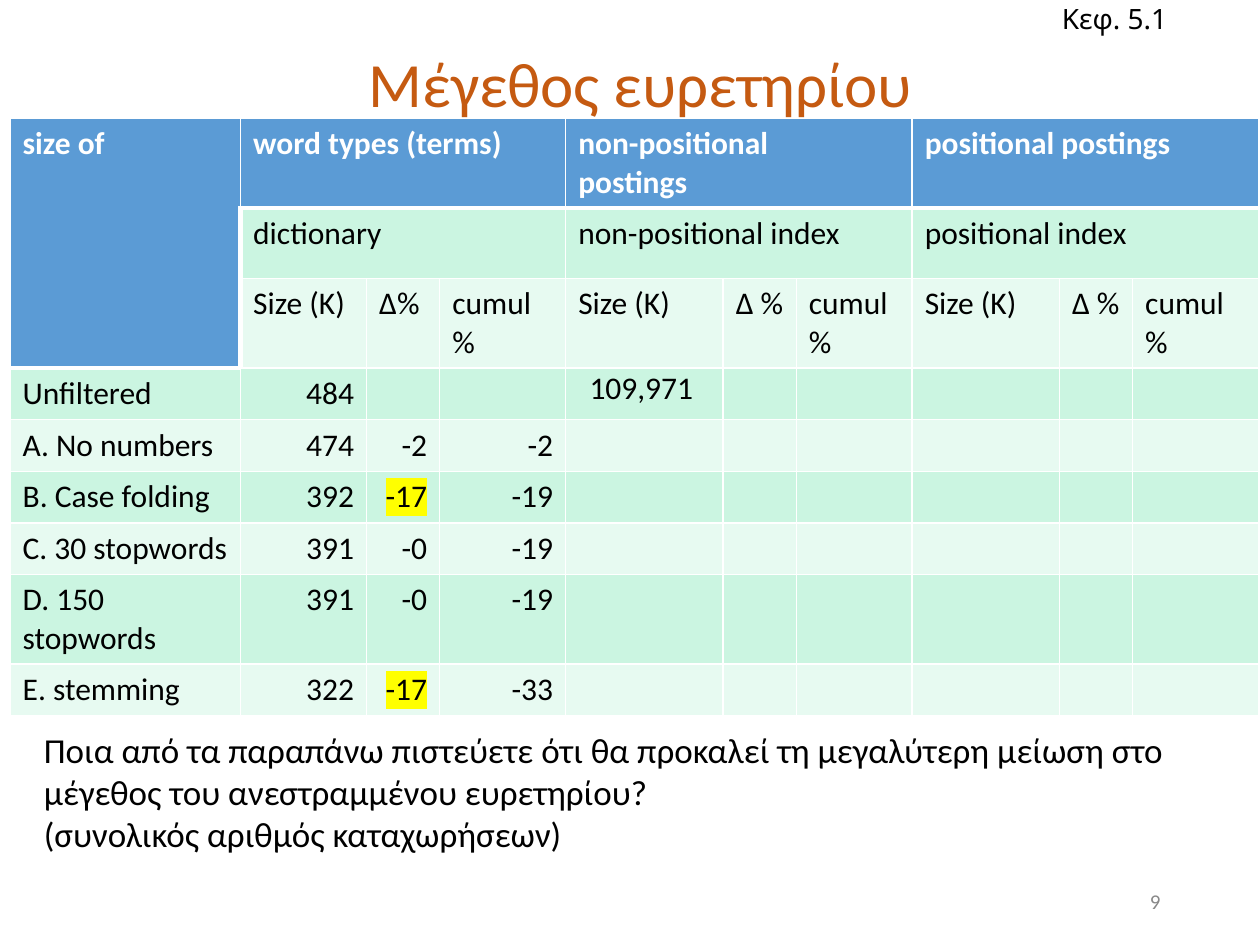
from lxml.etree import SubElement
from pptx import Presentation
from pptx.dml.color import RGBColor
from pptx.enum.text import MSO_ANCHOR as ANCHOR, MSO_AUTO_SIZE as FIT, PP_ALIGN as ALIGN
from pptx.oxml import parse_xml
from pptx.oxml.ns import qn
from pptx.util import Inches, Pt

A_NS = "http://schemas.openxmlformats.org/drawingml/2006/main"
BLUE, MINT, PALE = "5B9BD5", "CBF5E1", "E7FAF1"
WHITE, BLACK, YELLOW = "FFFFFF", "000000", "FFFF00"

COL_WIDTHS = [1.83, 1, 0.58, 1, 1.25, 0.58, 0.92, 1.17, 0.58, 1]
ROW_HEIGHTS = [0.57, 0.56, 0.43] + [0.41] * 6
GROUPS = [  # first column, header, subheader
    (1, "word types (terms)", "dictionary"),
    (4, "non-positional\npostings", "non-positional index"),
    (7, "positional postings", "positional index"),
]
MEASURES = ["Size (K)", "∆%", "cumul %"] + ["Size (K)", "∆ %", "cumul %"] * 2
DATA = [
    ("Unfiltered", "484"),
    ("Α. No numbers", "474", "-2", "-2"),
    ("Β. Case folding", "392", "-17", "-19"),
    ("C. 30 stopwords", "391", "-0", "-19"),
    ("D. 150 stopwords", "391", "-0", "-19"),
    ("E. stemming", "322", "-17", "-33"),
]


def rgb(value):
    return RGBColor.from_string(value)


def write(tf, text, size, color=BLACK, font="Calibri", align=None, bold=None, highlight=None):
    """Write one paragraph per line of text."""
    for i, line in enumerate(text.split("\n")):
        p = tf.add_paragraph() if i else tf.paragraphs[0]
        p.alignment = align
        r = p.add_run()
        r.text = line
        r.font.size, r.font.bold, r.font.name = Pt(size), bold, font
        r.font.color.rgb = rgb(color)
        if highlight:
            mark = parse_xml(f'<a:highlight xmlns:a="{A_NS}"><a:srgbClr val="{highlight}"/></a:highlight>')
            r.font._element.find(qn("a:solidFill")).addnext(mark)


def add_title(slide, box, text):
    title = slide.shapes.title
    title.left, title.top, title.width, title.height = map(Inches, box)
    tf = title.text_frame
    tf.vertical_anchor = ANCHOR.MIDDLE
    write(tf, text, 36, "C55A11", align=ALIGN.CENTER)
    tf.paragraphs[0].line_spacing = 0.9


def add_text(slide, box, text, size, wrap=True, anchor=ANCHOR.TOP, fit=FIT.SHAPE_TO_FIT_TEXT, **style):
    tf = slide.shapes.add_textbox(*map(Inches, box)).text_frame
    tf.word_wrap, tf.auto_size, tf.vertical_anchor = wrap, fit, anchor
    write(tf, text, size, **style)


def set_borders(cell, widths):
    """Draw white borders; widths run left, right, top, bottom."""
    tc_pr = cell._tc.get_or_add_tcPr()
    for i, (side, width) in enumerate(zip("LRTB", widths)):
        ln = SubElement(tc_pr, qn(f"a:ln{side}"), w=str(Pt(width)))
        SubElement(SubElement(ln, qn("a:solidFill")), qn("a:srgbClr"), val=WHITE)
        tc_pr.insert(i, ln)


def style_cell(cell, row, col):
    header = row == 0 or (col == 0 and row < 3)
    cell.fill.solid()
    cell.fill.fore_color.rgb = rgb(BLUE if header else MINT if row % 2 else PALE)
    # Thick rules separate the header from the body
    left = 3 if col == 1 and row in (1, 2) else 1
    top = 3 if (row == 1 and col) or (row == 3 and not col) else 1
    bottom = 3 if row == 0 or (row == 2 and not col) else 1
    set_borders(cell, (left, 1, top, bottom))


def add_index_table(slide, box):
    table = slide.shapes.add_table(len(ROW_HEIGHTS), len(COL_WIDTHS), *map(Inches, box)).table
    for column, width in zip(table.columns, COL_WIDTHS):
        column.width = Inches(width)
    for i, height in enumerate(ROW_HEIGHTS):
        table.rows[i].height = Inches(height)
        for j in range(len(COL_WIDTHS)):
            style_cell(table.cell(i, j), i, j)

    def put(row, col, text, **style):
        write(table.cell(row, col).text_frame, text, 18, **style)

    # Header rows
    head = {"color": WHITE, "bold": True}
    table.cell(0, 0).merge(table.cell(2, 0))
    put(0, 0, "size of", **head)
    for col, name, index in GROUPS:
        for row in (0, 1):
            table.cell(row, col).merge(table.cell(row, col + 2))
        put(0, col, name, **head)
        put(1, col, index, bold=False)
    for col, measure in enumerate(MEASURES, 1):
        put(2, col, measure, bold=False)

    # Body rows
    for row, values in enumerate(DATA, 3):
        for col, value in enumerate(values):
            put(row, col, value, bold=False, align=ALIGN.RIGHT if col else None,
                highlight=YELLOW if value == "-17" else None)


def main():
    prs = Presentation()
    prs.slide_width, prs.slide_height = Inches(10), Inches(7.5)
    slide = prs.slides.add_slide(prs.slide_layouts[5])

    add_title(slide, (0.5, 0.15, 9.17, 1.08), "Μέγεθος ευρετηρίου")
    add_index_table(slide, (0.08, 0.94, 9.92, 4.69))
    # Slide number and chapter
    add_text(slide, (7.06, 6.95, 2.25, 0.4), "9", 12, anchor=ANCHOR.MIDDLE, fit=FIT.NONE,
             color="898989", align=ALIGN.RIGHT)
    add_text(slide, (8.33, -0.04, 1.1, 0.37), "Κεφ. 5.1", 16, wrap=False,
             anchor=ANCHOR.MIDDLE, font="Noto Sans")
    # Question below the table
    add_text(slide, (0.25, 5.73, 9.33, 1.11),
             "Ποια από τα παραπάνω πιστεύετε ότι θα προκαλεί τη μεγαλύτερη μείωση στο "
             "μέγεθος του ανεστραμμένου ευρετηρίου?\n(συνολικός αριθμός καταχωρήσεων)", 20)
    # Unfiltered non-positional size
    add_text(slide, (4.57, 2.87, 1.03, 0.4), "109,971", 18, wrap=False, align=ALIGN.RIGHT)

    prs.save("out.pptx")


if __name__ == "__main__":
    main()
